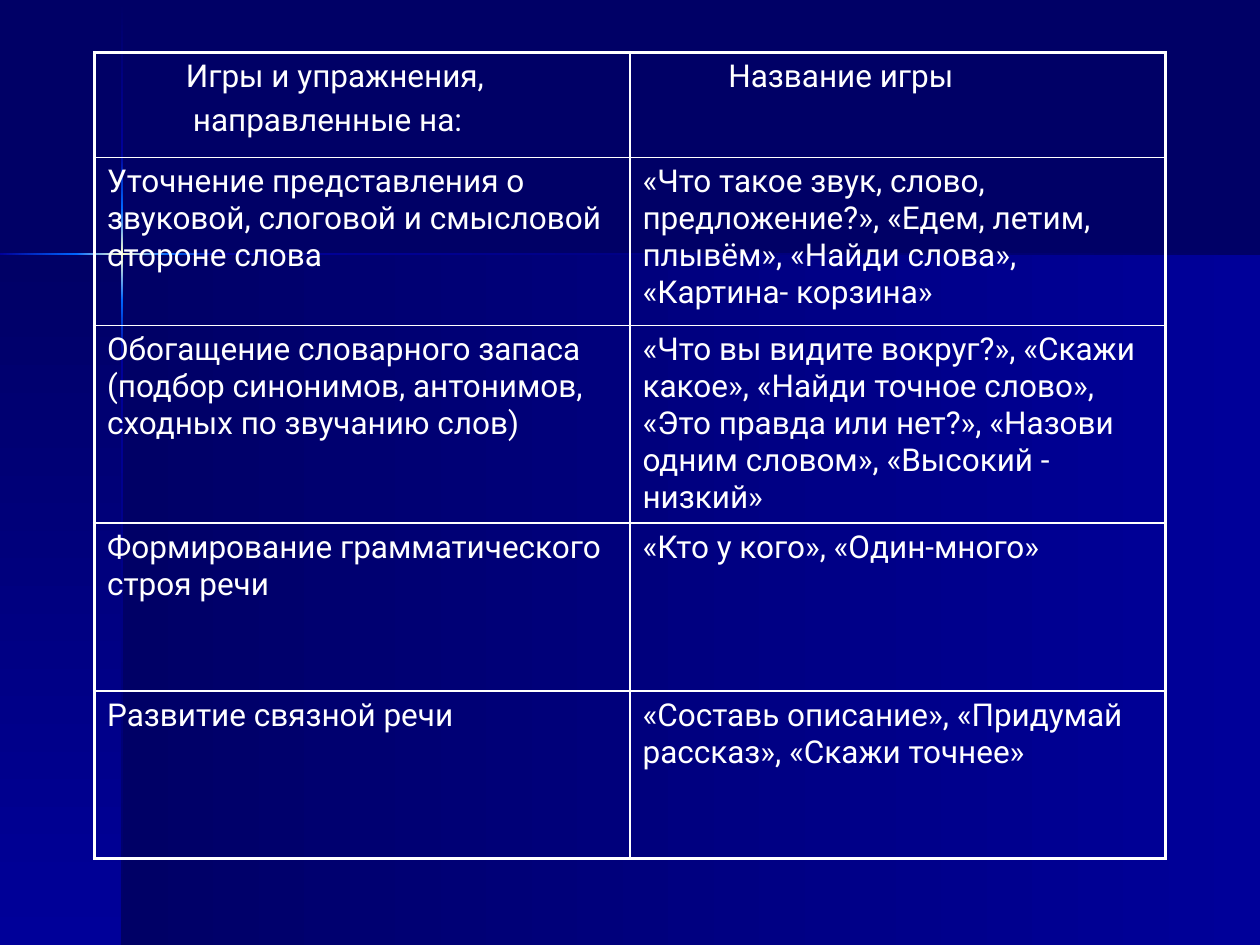
from copy import deepcopy
from itertools import pairwise

from lxml import etree
from pptx import Presentation
from pptx.dml.color import RGBColor
from pptx.enum.shapes import MSO_SHAPE
from pptx.oxml.ns import qn
from pptx.util import Pt

RECT = MSO_SHAPE.RECTANGLE
COLORS = {
    "dark": "000066",
    "mid": "000099",
    "bright": "0066FF",
    "pale": "FFFFCC",
    "white": "FFFFFF",
}
RISE = ("mid", "bright")
GLOW = ("bright", "pale", "bright")
FALL = ("bright", "mid")
FADE = ("mid", "dark")
ACROSS, DOWN = 0, 270

# Each cell is a list of (text, indent) paragraphs.
ROWS = [
    ([("Игры и упражнения,", 45), ("направленные на:", 49)],
     [("Название игры", 49)]),
    ([("Уточнение представления о звуковой, слоговой и смысловой стороне слова", 0)],
     [("«Что такое звук, слово, предложение?», «Едем, летим, плывём», "
       "«Найди слова», «Картина- корзина»", 0)]),
    ([("Обогащение словарного запаса (подбор синонимов, антонимов, "
       "сходных по звучанию слов)", 0)],
     [("«Что вы видите вокруг?», «Скажи какое», «Найди точное слово», "
       "«Это правда или нет?», «Назови одним словом», «Высокий - низкий»", 0)]),
    ([("Формирование грамматического строя речи", 0)],
     [("«Кто у кого», «Один-много»", 0)]),
    ([("Развитие связной речи", 0)],
     [("«Составь описание», «Придумай рассказ», «Скажи точнее»", 0)]),
]


def rgb(name):
    return RGBColor.from_string(COLORS[name])


class Deck:
    font, size, gap = "Roboto", 18, 4
    thick, thin = 2.25, 1

    def __init__(self, wide, high):
        self.prs = Presentation()
        self.prs.slide_width, self.prs.slide_height = Pt(wide), Pt(high)
        self.slide = self.prs.slides.add_slide(self.prs.slide_layouts[6])
        back = self.slide.background.fill
        back.solid()
        back.fore_color.rgb = rgb("dark")

    def panel(self, x, y, w, h, names, angle):
        """Add a borderless rectangle with evenly spaced gradient stops."""
        box = self.slide.shapes.add_shape(RECT, Pt(x), Pt(y), Pt(w), Pt(h))
        box.shadow.inherit = False
        box.line.fill.background()
        box.fill.gradient()
        box.fill.gradient_angle = angle
        stops = box._element.spPr.find(".//" + qn("a:gsLst"))
        for _ in names[2:]:
            stops.append(deepcopy(stops[0]))
        for i, (stop, name) in enumerate(zip(box.fill.gradient_stops, names)):
            stop.position = i / (len(names) - 1)
            stop.color.rgb = rgb(name)

    def beam(self, marks, side, width, fills, angle):
        """Chain gradient strips between successive marks along one axis."""
        for (start, end), names in zip(pairwise(marks), fills):
            span = end - start
            if angle == ACROSS:
                self.panel(start, side, span, width, names, angle)
            else:
                self.panel(side, start, width, span, names, angle)

    def edges(self, cell, widths):
        """Draw white borders; widths run left, right, top, bottom."""
        props = cell._tc.get_or_add_tcPr()
        for i, (side, width) in enumerate(zip("LRTB", widths)):
            line = etree.Element(qn(f"a:ln{side}"), w=str(Pt(width)))
            fill = etree.SubElement(line, qn("a:solidFill"))
            etree.SubElement(fill, qn("a:srgbClr"), val=COLORS["white"])
            props.insert(i, line)

    def label(self, cell, paras):
        frame = cell.text_frame
        for i, (text, indent) in enumerate(paras):
            para = frame.add_paragraph() if i else frame.paragraphs[0]
            para.space_before = Pt(self.gap)
            if indent:
                para._p.get_or_add_pPr().set("marL", str(Pt(indent)))
            run = para.add_run()
            run.text = text
            run.font.name, run.font.size = self.font, Pt(self.size)
            run.font.color.rgb = rgb("white")

    def table(self, x, y, widths, heights, rows):
        table = self.slide.shapes.add_table(
            len(heights), len(widths), Pt(x), Pt(y),
            Pt(sum(widths)), Pt(sum(heights))).table
        table.first_row = table.horz_banding = False
        for col, width in zip(table.columns, widths):
            col.width = Pt(width)
        for row, height in zip(table.rows, heights):
            row.height = Pt(height)
        last, end = len(heights) - 1, len(widths) - 1
        for r, row in enumerate(rows):
            for c, paras in enumerate(row):
                cell = table.cell(r, c)
                cell.fill.background()
                outer = (c == 0, c == end, r == 0, r == last)
                self.edges(cell, [self.thick if o else self.thin for o in outer])
                self.label(cell, paras)


def main():
    deck = Deck(720, 540)
    deck.panel(70, 145.5, 650, 394.5, ("dark", "mid"), ACROSS)
    deck.panel(0, 145.5, 70, 394.5, ("dark", "mid"), DOWN)
    deck.beam((0.5, 87, 119, 171.5, 203, 540), 69, 1.5,
              (FADE[::-1], RISE, GLOW, FALL, FADE), DOWN)
    deck.beam((0, 43.5, 96, 127.5, 720), 144.5, 1.5,
              (RISE, GLOW, FALL, FADE), ACROSS)
    deck.table(54, 30, [306] * 2, [60] + [96] * 4, ROWS)
    deck.prs.save("out.pptx")


if __name__ == "__main__":
    main()
